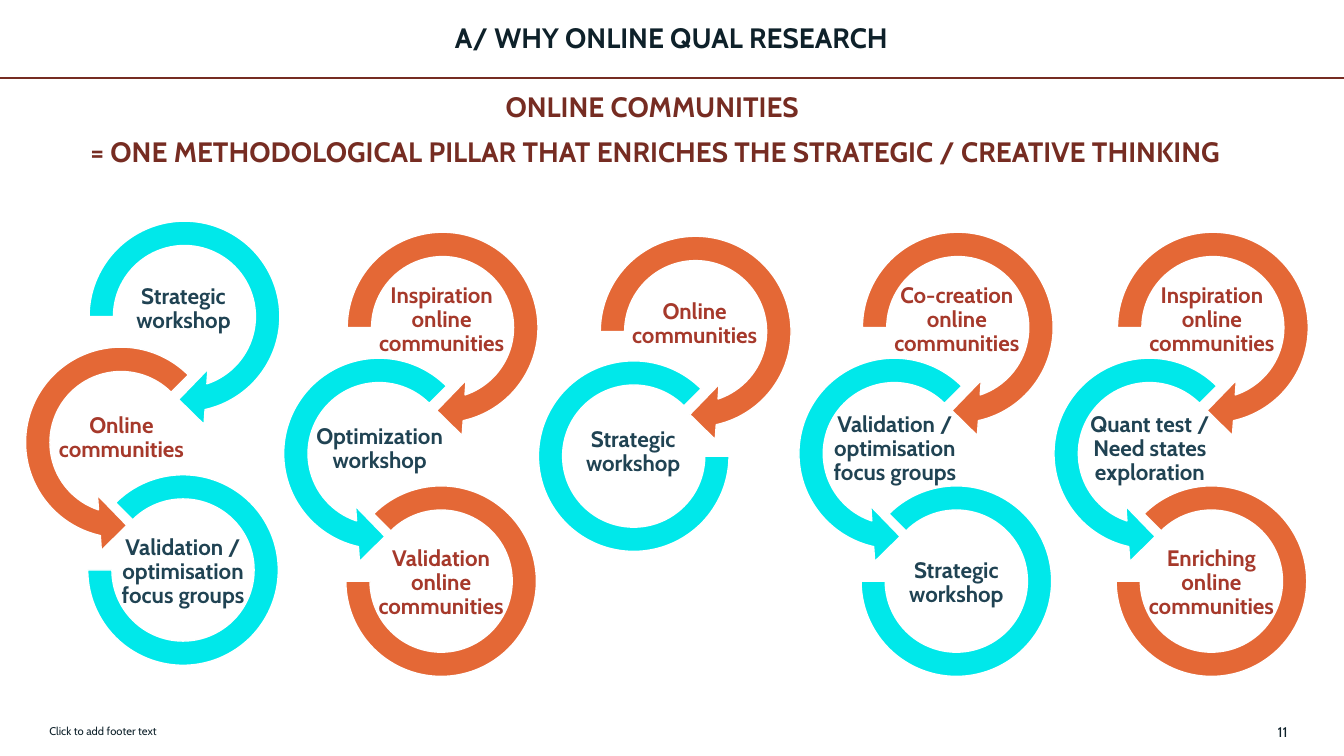
from pptx import Presentation
from pptx.dml.color import RGBColor
from pptx.enum.shapes import MSO_CONNECTOR, MSO_SHAPE as SHAPE
from pptx.enum.text import MSO_ANCHOR as ANCHOR, PP_ALIGN as ALIGN
from pptx.util import Inches, Pt
from lxml import etree

INK = RGBColor(0x0E, 0x21, 0x2A)
MAROON = RGBColor(0x76, 0x2C, 0x22)
NAVY = RGBColor(0x20, 0x43, 0x53)
RED = RGBColor(0xA6, 0x39, 0x2B)
CYAN = RGBColor(0x00, 0xE8, 0xEA)
ORANGE = RGBColor(0xE4, 0x68, 0x36)
WHITE = RGBColor(0xFF, 0xFF, 0xFF)

prs = Presentation()
prs.slide_width, prs.slide_height = Inches(13.33), Inches(7.5)
s = prs.slides.add_slide(prs.slide_layouts[6])


def add_text(box, lines, font, para, anchor=ANCHOR.MIDDLE, inset=(0, 0)):
    tf = s.shapes.add_textbox(*map(Inches, box)).text_frame
    tf.word_wrap = True
    tf.vertical_anchor = anchor
    tf.margin_left = tf.margin_right = Inches(inset[0])
    tf.margin_top = tf.margin_bottom = Inches(inset[1])
    for i, line in enumerate(lines):
        p = tf.add_paragraph() if i else tf.paragraphs[0]
        for name, value in para.items():
            setattr(p, name, value)
        r = p.add_run()
        r.text = line
        r.font.name = "Cabin"
        r.font.color.rgb = font["color"]
        for name in ("size", "bold"):
            setattr(r.font, name, font[name])


rule = s.shapes.add_connector(MSO_CONNECTOR.STRAIGHT, 0, Inches(0.77), Inches(13.33), Inches(0.77))
rule.line.color.rgb = MAROON
rule.line.width = Pt(1.5)
etree.SubElement(rule.line._get_or_add_ln().getparent(),
                 "{http://schemas.openxmlformats.org/drawingml/2006/main}effectLst")

add_text((0.39, 0, 12.54, 0.74), ["A/ WHY ONLINE QUAL RESEARCH"],
         {"size": Pt(20), "bold": True, "color": INK}, {"alignment": ALIGN.CENTER})
add_text((0.23, 0.89, 12.54, 0.9),
         ["ONLINE COMMUNITIES ",
          "= ONE METHODOLOGICAL PILLAR THAT ENRICHES THE STRATEGIC / CREATIVE THINKING"],
         {"size": Pt(20), "bold": True, "color": MAROON},
         {"alignment": ALIGN.CENTER, "space_after": Pt(8)}, ANCHOR.TOP)
add_text((0.39, 7.15, 5.49, 0.21), ["Click to add footer text"],
         {"size": Pt(8), "bold": False, "color": INK}, {"alignment": ALIGN.LEFT}, inset=(0.1, 0.05))
add_text((11.71, 7.15, 1.06, 0.22), ["11"],
         {"size": Pt(10), "bold": False, "color": INK}, {"alignment": ALIGN.RIGHT})

TOP_ARROW = (SHAPE.CIRCULAR_ARROW, (0, 0, 2.2), (0.43, 0.66, 1.32, 0.73), (0.11, 11.423, 45, 108, 0.125))
LEFT_ARROW = (SHAPE.LEFT_CIRCULAR_ARROW, (-0.63, 1.25, 2.2), (-0.25, 2, 1.45, 0.61),
              (0.11, 11.423, 63, 189, 0.125))
END_RING = (SHAPE.BLOCK_ARC, (0.14, 2.67, 1.89), (0.36, 3.33, 1.45, 0.61), (135, 108, 0.127))
SHORT_RING = (SHAPE.BLOCK_ARC, (-0.46, 1.39, 1.89), (-0.25, 1.99, 1.46, 0.61), (0, 189, 0.127))
THREE_STEPS = (TOP_ARROW, LEFT_ARROW, END_RING)
TWO_STEPS = (TOP_ARROW, SHORT_RING)

chains = [
    (0.73, 2.04, THREE_STEPS,
     ["Strategic workshop", "Online communities", "Validation / optimisation focus groups"]),
    (3.29, 2.15, THREE_STEPS,
     ["Inspiration online communities", "Optimization workshop", "Validation online communities"]),
    (5.8, 2.19, TWO_STEPS, ["Online communities", "Strategic workshop"]),
    (8.4, 2.15, THREE_STEPS,
     ["Co-creation online communities", "Validation / optimisation focus groups", "Strategic workshop"]),
    (10.93, 2.15, THREE_STEPS,
     ["Inspiration online communities", "Quant test / Need states exploration",
      "Enriching online communities"]),
]

for x, y, steps, labels in chains:
    for (kind, (dx, dy, size), (tx, ty, w, h), adjustments), label in zip(steps, labels):
        online = "communities" in label
        sp = s.shapes.add_shape(kind, Inches(x + dx), Inches(y + dy), Inches(size), Inches(size))
        sp.shadow.inherit = False
        sp.fill.solid()
        sp.fill.fore_color.rgb = ORANGE if online else CYAN
        sp.line.color.rgb = WHITE
        sp.line.width = Pt(1)
        for i, value in enumerate(adjustments):
            sp.adjustments[i] = value
        add_text((x + tx, y + ty, w, h), [label],
                 {"size": Pt(16), "bold": True, "color": RED if online else NAVY},
                 {"alignment": ALIGN.CENTER, "line_spacing": 0.9}, inset=(0.01, 0.01))

prs.save("out.pptx")
